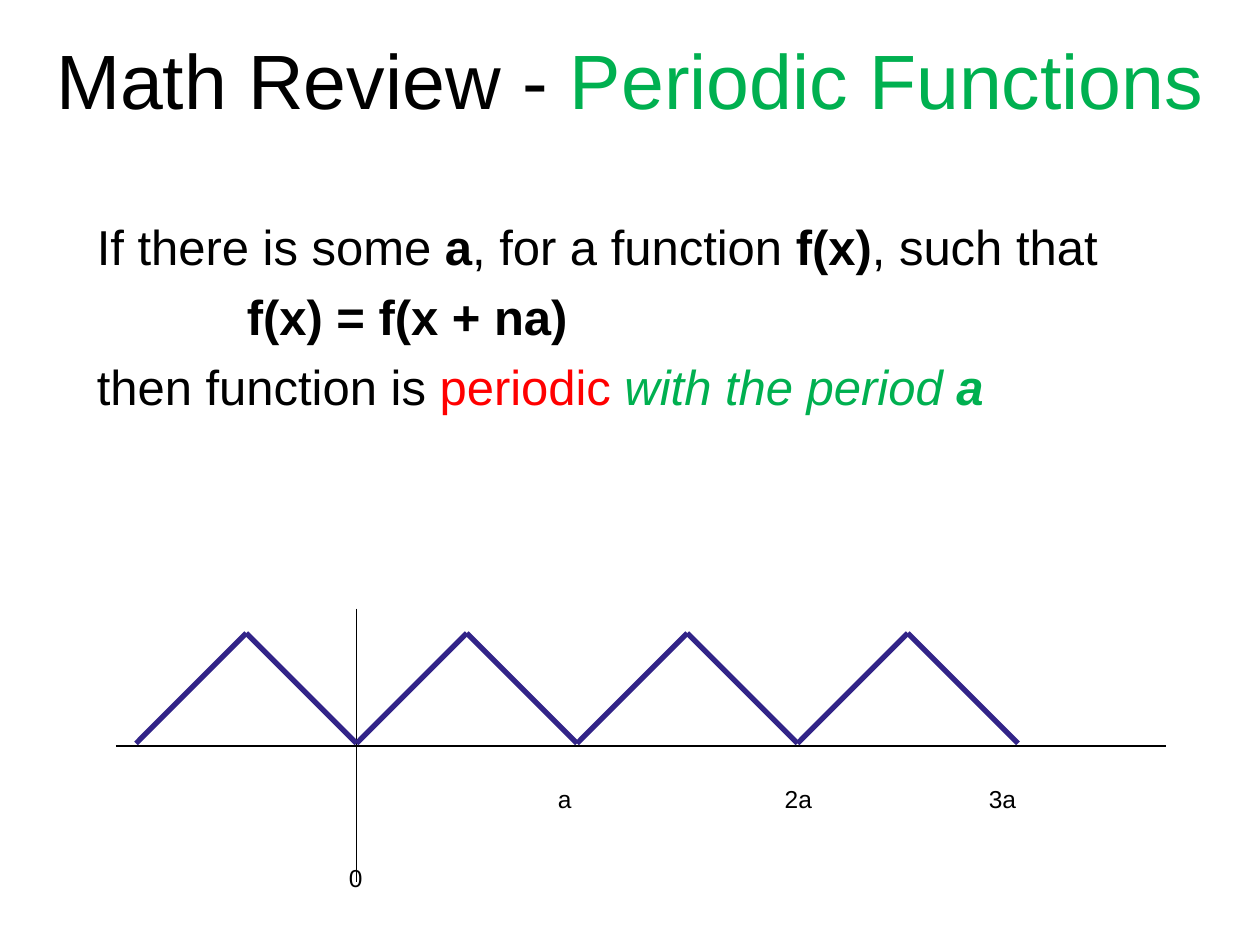
"""Build a slide defining periodic functions above a triangle wave."""
from pptx import Presentation
from pptx.dml.color import RGBColor
from pptx.enum.shapes import MSO_CONNECTOR
from pptx.enum.text import MSO_ANCHOR, PP_ALIGN
from pptx.oxml.ns import qn
from pptx.util import Inches, Pt

STRAIGHT = MSO_CONNECTOR.STRAIGHT
TOP, MIDDLE = MSO_ANCHOR.TOP, MSO_ANCHOR.MIDDLE
LEFT, CENTER = PP_ALIGN.LEFT, PP_ALIGN.CENTER

THEME = {
    "font": "Arial",
    "black": "000000", "green": "00B050", "red": "FF0000", "wave": "322488",
    "title": 44, "body": 28, "label": 14,
    "axis_width": 0.75, "wave_width": 3,
}
WIDTH, HEIGHT = 10, 7.5

TITLE = [[("Math Review - ", "black", ""), ("Periodic Functions", "green", "")]]
DEFINITION = [
    [("If there is some ", "black", ""), ("a", "black", "b"),
     (", for a function ", "black", ""), ("f(x)", "black", "b"),
     (", such that", "black", "")],
    [("f(x) = f(x + na)", "black", "b")],
    [("then function is ", "black", ""), ("periodic ", "red", ""),
     ("with the period ", "green", "i"), ("a", "green", "bi")],
]
FORMULA_INDENTS = (0, 1.19, 0)
LABELS = [("0", 2.67, 6.8), ("a", 4.33, 6.17), ("2a", 6.13, 6.17), ("3a", 7.75, 6.17)]

ORIGIN_X, ORIGIN_Y = 2.83, 5.92
PERIOD = 1.75
HALF = PERIOD / 2
FIRST_TOOTH, LAST_TOOTH = -1, 2
WAVE_BASE = ORIGIN_Y - 0.02
AXES = [
    ((0.92, ORIGIN_Y), (9.25, ORIGIN_Y)),
    ((ORIGIN_X, 4.83), (ORIGIN_X, 7)),
]


def add_text(slide, paragraphs, box, *, size, align=LEFT, anchor=TOP,
             wrap=True, space_before=0, indents=None):
    shape = slide.shapes.add_textbox(*(Inches(length) for length in box))
    frame = shape.text_frame
    frame.word_wrap = wrap
    frame.vertical_anchor = anchor
    for index, runs in enumerate(paragraphs):
        paragraph = frame.paragraphs[0] if index == 0 else frame.add_paragraph()
        paragraph.alignment = align
        paragraph.space_before = Pt(space_before)
        if indents:
            paragraph._p.get_or_add_pPr().set("marL", str(Inches(indents[index])))
        for text, color, style in runs:
            run = paragraph.add_run()
            run.text = text
            run.font.name = THEME["font"]
            run.font.size = Pt(THEME[size])
            run.font.color.rgb = RGBColor.from_string(THEME[color])
            run.font.bold = "b" in style
            run.font.italic = "i" in style


def add_line(slide, start, end, color, width):
    connector = slide.shapes.add_connector(
        STRAIGHT, *(Inches(length) for length in (*start, *end)))
    connector.line.color.rgb = RGBColor.from_string(THEME[color])
    connector.line.width = Pt(THEME[width])
    properties = connector._element.spPr
    properties.append(properties.makeelement(qn("a:effectLst"), {}))


def add_wave(slide):
    for tooth in range(FIRST_TOOTH, LAST_TOOTH + 1):
        start = ORIGIN_X + tooth * PERIOD
        peak = (start + HALF, WAVE_BASE - HALF)
        for foot in (start, start + PERIOD):
            add_line(slide, (foot, WAVE_BASE), peak, "wave", "wave_width")


def main():
    presentation = Presentation()
    presentation.slide_width = Inches(WIDTH)
    presentation.slide_height = Inches(HEIGHT)
    slide = presentation.slides.add_slide(presentation.slide_layouts[6])

    add_text(slide, TITLE, (0, 0, WIDTH, HEIGHT / 6),
             size="title", align=CENTER, anchor=MIDDLE)
    add_text(slide, DEFINITION, (0.67, 1.67, 8.92, 2),
             size="body", space_before=6.5, indents=FORMULA_INDENTS)
    for start, end in AXES:
        add_line(slide, start, end, "black", "axis_width")
    add_wave(slide)
    for text, left, top in LABELS:
        width = 0.21 + 0.16 * len(text)
        add_text(slide, [[(text, "black", "")]], (left, top, width, 0.5),
                 size="label", wrap=False)
    presentation.save("out.pptx")


if __name__ == "__main__":
    main()
